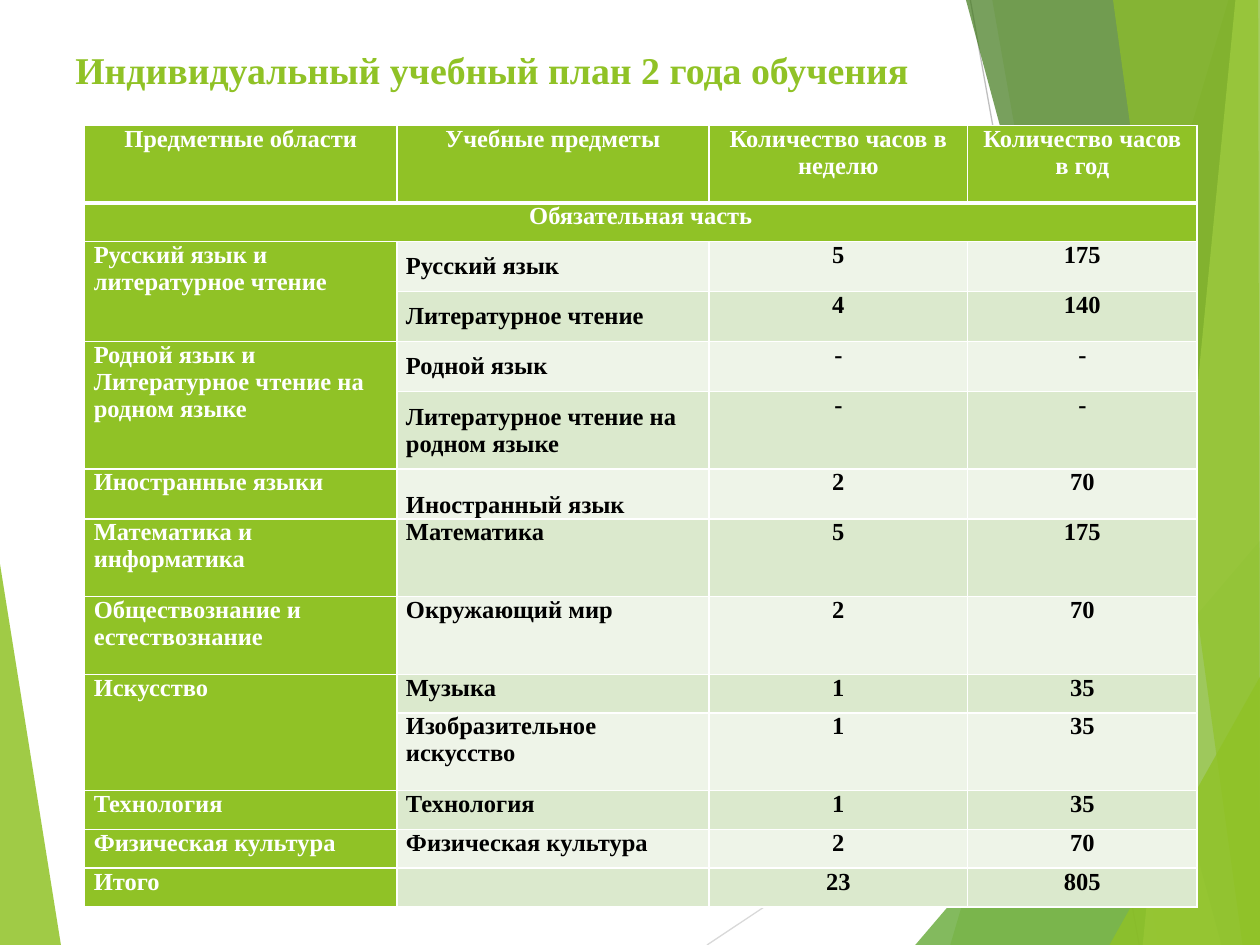
from dataclasses import dataclass

from lxml import etree
from pptx import Presentation
from pptx.dml.color import RGBColor
from pptx.enum.shapes import MSO_CONNECTOR
from pptx.enum.text import MSO_ANCHOR, PP_ALIGN
from pptx.oxml.ns import qn
from pptx.util import Pt

STRAIGHT = MSO_CONNECTOR.STRAIGHT
TOP, MIDDLE, BOTTOM = MSO_ANCHOR.TOP, MSO_ANCHOR.MIDDLE, MSO_ANCHOR.BOTTOM
LEFT, CENTER = PP_ALIGN.LEFT, PP_ALIGN.CENTER


@dataclass(frozen=True)
class Theme:
    font: str = "Times New Roman"
    title_size: float = 21.6
    table_size: float = 14
    green: str = "90C226"
    leaf: str = "54A021"
    forest: str = "3F7819"
    lime: str = "C0E474"
    white: str = "FFFFFF"
    black: str = "000000"
    band_light: str = "EEF4E8"
    band_dark: str = "DBE9CD"


THEME = Theme()
PAGE_W, PAGE_H = 720, 540

TITLE = "Индивидуальный учебный план 2 года обучения"

# Facets: colour, opacity in percent, corners
LEFT_FACET = (THEME.green, 85, [(-1, 316), (35, 541), (-1, 540)])
RIGHT_FACETS = [
    (THEME.green, 30, [(702, 0), (543, 540), (721, 540), (721, 0)]),
    (THEME.green, 20, [(567, 0), (662, 540), (721, 540), (721, 0)]),
    (THEME.leaf, 72, [(523, 540), (720, 309), (721, 540)]),
    (THEME.forest, 70, [(552, 0), (698, 540), (721, 540), (721, 0)]),
    (THEME.lime, 70, [(706, 0), (653, 540), (721, 540), (720, 0)]),
    (THEME.green, 65, [(636, 0), (710, 540), (720, 540), (719, 0)]),
    (THEME.green, 80, [(634, 540), (721, 385), (721, 540)]),
]
# Rays: colour, start, end
RAYS = [
    ("D9D9D9", (404, 540), (721, 329)),
    ("BFBFBF", (554.5, 0), (651, 540)),
]

TABLE_LEFT, TABLE_TOP = 48.4, 71.6
COLUMN_WIDTHS = [178.4, 178.4, 147.8, 131.1]
ONE_LINE, MEDIUM, TWO_LINES = 22.17, 28.57, 44.35

HEADER = ("Предметные области", "Учебные предметы",
          "Количество часов в неделю", "Количество часов в год")
SECTION = "Обязательная часть"
# Row height, anchor of the subject, then the four cells;
# an area of None continues the area above
SUBJECTS = [
    (MEDIUM, MIDDLE, "Русский язык и литературное чтение", "Русский язык", "5", "175"),
    (MEDIUM, MIDDLE, None, "Литературное чтение", "4", "140"),
    (MEDIUM, MIDDLE, "Родной язык и Литературное чтение на родном языке",
     "Родной язык", "-", "-"),
    (TWO_LINES, MIDDLE, None, "Литературное чтение на родном языке", "-", "-"),
    (MEDIUM, BOTTOM, "Иностранные языки", "Иностранный язык", "2", "70"),
    (TWO_LINES, TOP, "Математика и информатика", "Математика", "5", "175"),
    (TWO_LINES, TOP, "Обществознание и естествознание", "Окружающий мир", "2", "70"),
    (ONE_LINE, TOP, "Искусство", "Музыка", "1", "35"),
    (TWO_LINES, TOP, None, "Изобразительное искусство", "1", "35"),
    (ONE_LINE, TOP, "Технология", "Технология", "1", "35"),
    (ONE_LINE, TOP, "Физическая культура", "Физическая культура", "2", "70"),
    (ONE_LINE, TOP, "Итого", None, "23", "805"),
]


def rgb(code):
    return RGBColor.from_string(code)


def add_facet(page, color, opacity, corners):
    points = [(Pt(x), Pt(y)) for x, y in corners]
    builder = page.shapes.build_freeform(*points[0])
    builder.add_line_segments(points[1:], close=True)
    facet = builder.convert_to_shape()
    facet.shadow.inherit = False
    facet.line.fill.background()
    facet.fill.solid()
    facet.fill.fore_color.rgb = rgb(color)
    tint = facet.fill._xPr.find(".//" + qn("a:srgbClr"))
    etree.SubElement(tint, qn("a:alpha"), val=str(opacity * 1000))


def add_ray(page, color, start, end):
    ray = page.shapes.add_connector(STRAIGHT, *(Pt(v) for v in start + end))
    ray.line.color.rgb = rgb(color)
    ray.line.width = Pt(0.75)
    etree.SubElement(ray._element.spPr, qn("a:effectLst"))


def add_span(para, text, size, color):
    span = para.add_run()
    span.text = text
    span.font.name = THEME.font
    span.font.size = Pt(size)
    span.font.bold = True
    span.font.color.rgb = rgb(color)


def add_title(page):
    box = page.shapes.add_textbox(Pt(36), Pt(21.6), Pt(648), Pt(36))
    frame = box.text_frame
    frame.word_wrap = True
    frame.vertical_anchor = MIDDLE
    add_span(frame.paragraphs[0], TITLE, THEME.title_size, THEME.green)


def style_cell(cell, fill, top=1, bottom=1):
    """Set insets, white borders (top and bottom widths in points) and fill."""
    cell.margin_left = cell.margin_right = Pt(5.2)
    cell.margin_top = cell.margin_bottom = 0
    properties = cell._tc.get_or_add_tcPr()
    for side, width in (("L", 1), ("R", 1), ("T", top), ("B", bottom)):
        border = etree.SubElement(properties, qn("a:ln" + side), w=str(Pt(width)))
        paint = etree.SubElement(border, qn("a:solidFill"))
        etree.SubElement(paint, qn("a:srgbClr"), val=THEME.white)
    cell.fill.solid()
    cell.fill.fore_color.rgb = rgb(fill)


def write_cell(cell, text, color, align, anchor=TOP):
    cell.vertical_anchor = anchor
    para = cell.text_frame.paragraphs[0]
    para.alignment = align
    if text:
        add_span(para, text, THEME.table_size, color)


def add_plan(page):
    heights = [TWO_LINES, ONE_LINE] + [row[0] for row in SUBJECTS]
    table = page.shapes.add_table(
        len(heights), len(COLUMN_WIDTHS), Pt(TABLE_LEFT), Pt(TABLE_TOP),
        Pt(sum(COLUMN_WIDTHS)), Pt(sum(heights))).table
    for column, width in zip(table.columns, COLUMN_WIDTHS):
        column.width = Pt(width)
    for row, height in zip(table.rows, heights):
        row.height = Pt(height)

    for c, text in enumerate(HEADER):
        style_cell(table.cell(0, c), THEME.green, bottom=3)
        write_cell(table.cell(0, c), text, THEME.white, CENTER)
        style_cell(table.cell(1, c), THEME.green, top=3)
    table.cell(1, 0).merge(table.cell(1, len(HEADER) - 1))
    write_cell(table.cell(1, 0), SECTION, THEME.white, CENTER)

    for r, (_, anchor, area, subject, *hours) in enumerate(SUBJECTS, start=2):
        band = THEME.band_dark if r % 2 else THEME.band_light
        for c in range(len(HEADER)):
            style_cell(table.cell(r, c), band if c else THEME.green)
        if area:
            write_cell(table.cell(r, 0), area, THEME.white, LEFT)
        else:
            table.cell(r - 1, 0).merge(table.cell(r, 0))
        write_cell(table.cell(r, 1), subject, THEME.black, LEFT, anchor)
        for c, value in enumerate(hours, start=2):
            write_cell(table.cell(r, c), value, THEME.black, CENTER)


def main():
    deck = Presentation()
    deck.slide_width, deck.slide_height = Pt(PAGE_W), Pt(PAGE_H)
    page = deck.slides.add_slide(deck.slide_layouts[6])
    add_facet(page, *LEFT_FACET)
    for ray in RAYS:
        add_ray(page, *ray)
    for facet in RIGHT_FACETS:
        add_facet(page, *facet)
    add_title(page)
    add_plan(page)
    deck.save("out.pptx")


if __name__ == "__main__":
    main()
